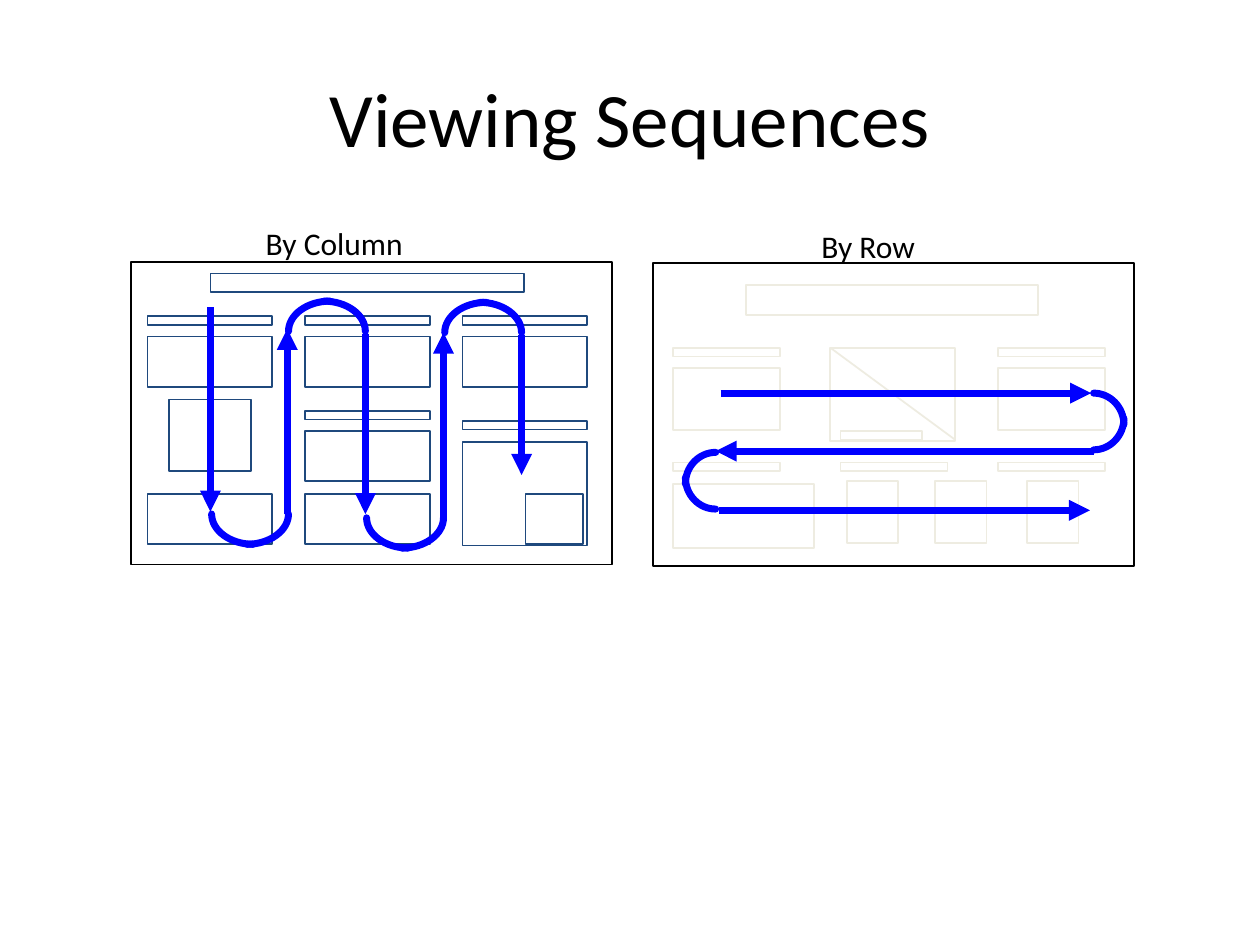
from lxml.etree import SubElement
from pptx import Presentation
from pptx.dml.color import RGBColor
from pptx.enum.shapes import MSO_CONNECTOR, MSO_SHAPE
from pptx.enum.text import MSO_ANCHOR, PP_ALIGN
from pptx.oxml.ns import qn
from pptx.util import Inches, Pt

BLACK, WHITE, NAVY, CREAM, BLUE = "000000", "FFFFFF", "1F497D", "EEECE1", "0000FF"
COLUMN_LEFTS = [1.17 + 1.25 * index for index in range(3)]
COLUMN_WIDTH = 0.99
HEADING_HEIGHT = 0.07
CURVE_RATIO = 0.55


def color(value):
    return RGBColor.from_string(value)


def style_line(line, value, width):
    line.color.rgb = color(value)
    line.width = Pt(width)


def add_text(shapes, text, left, top, width, height, size):
    box = shapes.add_textbox(Inches(left), Inches(top), Inches(width), Inches(height))
    frame = box.text_frame
    frame.word_wrap = True
    frame.text = text
    font = frame.paragraphs[0].runs[0].font
    font.name = "Calibri"
    font.size = Pt(size)
    font.color.rgb = color(BLACK)
    return frame


def add_title(shapes, text):
    frame = add_text(shapes, text, 0.5, 0.3, 9, 1.25, 44)
    frame.vertical_anchor = MSO_ANCHOR.MIDDLE
    frame.paragraphs[0].alignment = PP_ALIGN.CENTER


def add_block(shapes, left, top, width, height, outline):
    block = shapes.add_shape(
        MSO_SHAPE.RECTANGLE, Inches(left), Inches(top), Inches(width), Inches(height)
    )
    block.shadow.inherit = False
    block.fill.solid()
    block.fill.fore_color.rgb = color(WHITE)
    style_line(block.line, outline, 1)


def add_line(shapes, start, end, value, width):
    points = [Inches(number) for number in (*start, *end)]
    connector = shapes.add_connector(MSO_CONNECTOR.STRAIGHT, *points)
    style_line(connector.line, value, width)
    SubElement(connector._element.spPr, qn("a:effectLst"))
    return connector


def add_arrow(shapes, start, end):
    connector = add_line(shapes, start, end, BLUE, 4)
    SubElement(connector.line._get_or_add_ln(), qn("a:tailEnd"), type="triangle")


def add_quarter_arc(shapes, left, top, width, height, x_side, y_side):
    center_x = left if x_side > 0 else left + width
    center_y = top if y_side > 0 else top + height

    def place(across, down):
        x = Inches(center_x + x_side * width * across)
        y = Inches(center_y + y_side * height * down)
        return x, y

    builder = shapes.build_freeform(*place(1, 0))
    builder.add_line_segments([place(0, 1)], close=False)
    arc = builder.convert_to_shape()
    segment = next(arc._element.iter(qn("a:lnTo")))
    curve = SubElement(segment.getparent(), qn("a:cubicBezTo"))
    for x, y in (place(1, CURVE_RATIO), place(CURVE_RATIO, 1), place(0, 1)):
        local_x, local_y = x - Inches(left), y - Inches(top)
        SubElement(curve, qn("a:pt"), x=str(local_x), y=str(local_y))
    segment.getparent().remove(segment)
    arc.shadow.inherit = False
    arc.fill.background()
    style_line(arc.line, BLUE, 4)
    arc.line._get_or_add_ln().set("cap", "rnd")


def add_column_turn(shapes, left, top, y_side):
    for x_side, offset in ((1, 0.28), (-1, 0)):
        add_quarter_arc(shapes, left + offset, top, 0.33, 0.24, x_side, y_side)


def add_row_turn(shapes, left, top, x_side):
    for y_side, offset in ((-1, 0), (1, 0.2)):
        add_quarter_arc(shapes, left, top + offset, 0.24, 0.25, x_side, y_side)


def add_column_layout(page):
    add_block(page.shapes, 1.04, 2.08, 3.82, 2.4, BLACK)
    shapes = page.shapes.add_group_shape().shapes
    add_block(shapes, 1.67, 2.17, 2.49, 0.15, NAVY)
    for left in COLUMN_LEFTS:
        add_block(shapes, left, 2.51, COLUMN_WIDTH, HEADING_HEIGHT, NAVY)
        add_block(shapes, left, 2.67, COLUMN_WIDTH, 0.4, NAVY)
    first, second, third = COLUMN_LEFTS
    add_block(shapes, 1.34, 3.17, 0.65, 0.57, NAVY)
    for left, top, height in (
        (first, 3.92, 0.4),
        (second, 3.26, HEADING_HEIGHT),
        (second, 3.42, 0.4),
        (second, 3.92, 0.4),
        (third, 3.34, HEADING_HEIGHT),
        (third, 3.51, 0.82),
    ):
        add_block(shapes, left, top, COLUMN_WIDTH, height, NAVY)
    add_block(shapes, 4.17, 3.92, 0.46, 0.4, NAVY)


def add_row_layout(page):
    shapes = page.shapes
    add_block(shapes, 5.18, 2.09, 3.82, 2.4, BLACK)
    add_block(shapes, 5.92, 2.26, 2.32, 0.24, CREAM)
    add_block(shapes, 6.59, 2.76, 0.99, 0.74, CREAM)
    add_block(shapes, 6.67, 3.42, 0.65, HEADING_HEIGHT, CREAM)
    add_line(shapes, (6.59, 2.76), (7.58, 3.49), CREAM, 1)
    for left in (5.34, 7.92):
        add_block(shapes, left, 2.76, 0.85, HEADING_HEIGHT, CREAM)
        add_block(shapes, left, 2.92, 0.85, 0.49, CREAM)
    for left in (5.34, 6.67, 7.92):
        add_block(shapes, left, 3.67, 0.85, HEADING_HEIGHT, CREAM)
    add_block(shapes, 5.34, 3.84, 1.12, 0.51, CREAM)
    for left in (6.72, 7.42, 8.15):
        add_block(shapes, left, 3.82, 0.41, 0.49, CREAM)


def add_column_sequence(page):
    shapes = page.shapes.add_group_shape().shapes
    for x, start, end in (
        (1.67, 2.44, 4.06),
        (2.28, 4.08, 2.61),
        (2.9, 2.65, 4.08),
        (3.52, 4.11, 2.64),
        (4.14, 2.66, 3.77),
    ):
        add_arrow(shapes, (x, start), (x, end))
    for left, top, y_side in (
        (1.68, 4.08, 1),
        (2.29, 2.39, -1),
        (2.91, 4.11, 1),
        (3.53, 2.4, -1),
    ):
        add_column_turn(shapes, left, top, y_side)


def add_row_sequence(page):
    shapes = page.shapes.add_group_shape().shapes
    for y, start, end in ((3.12, 5.72, 8.66), (3.58, 8.68, 5.68), (4.05, 5.71, 8.65)):
        add_arrow(shapes, (start, y), (end, y))
    add_row_turn(shapes, 8.68, 3.12, 1)
    add_row_turn(shapes, 5.44, 3.59, -1)


def main():
    deck = Presentation()
    deck.slide_width = Inches(10)
    deck.slide_height = Inches(7.5)
    page = deck.slides.add_slide(deck.slide_layouts[6])
    add_column_layout(page)
    add_row_layout(page)
    add_title(page.shapes, "Viewing Sequences")
    add_text(page.shapes, "By Column", 2.01, 1.73, 1.71, 0.4, 18)
    add_text(page.shapes, "By Row", 6.42, 1.75, 1.2, 0.4, 18)
    add_column_sequence(page)
    add_row_sequence(page)
    deck.save("out.pptx")


if __name__ == "__main__":
    main()
